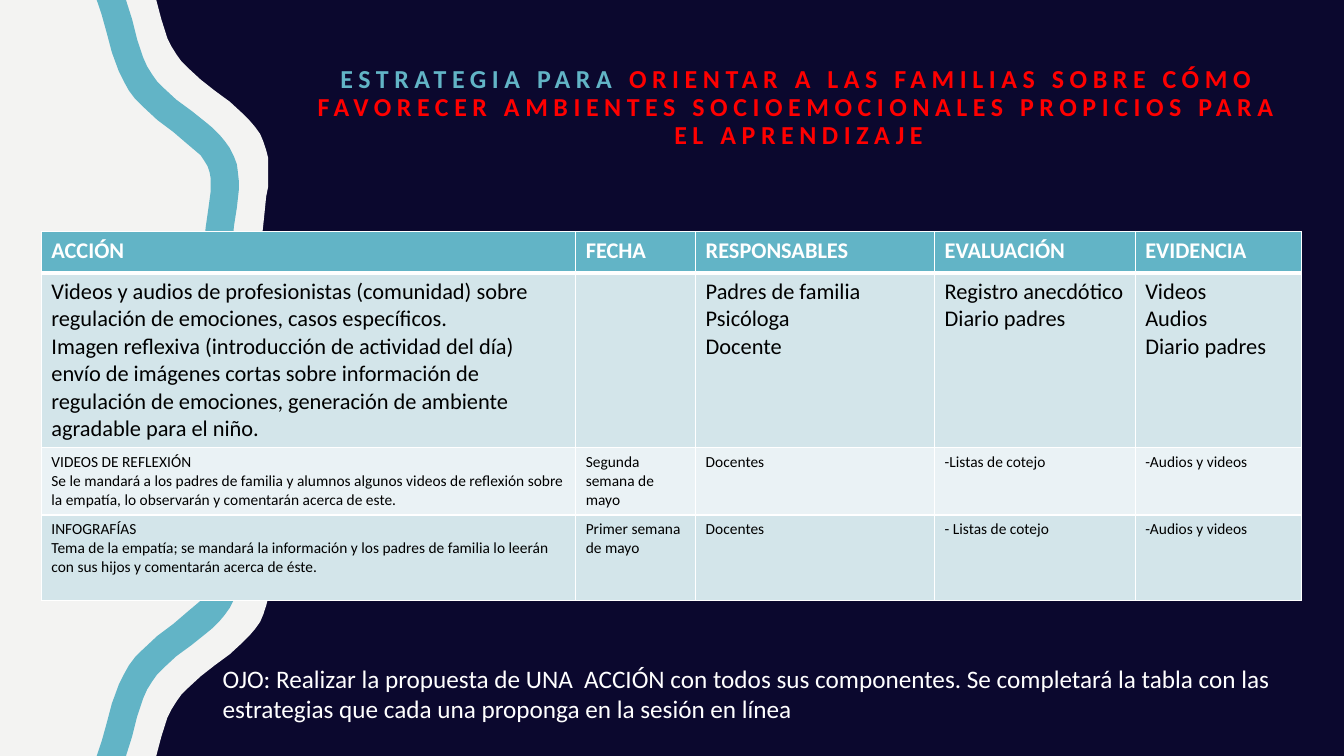
from dataclasses import dataclass

import pptx
from lxml import etree
from pptx import dml, oxml, slide as s, table as t, util as u
from pptx.dml import color
from pptx.enum import text
from pptx.oxml import ns
from pptx.text import text as tx

Point = tuple[float, float]


@dataclass(frozen=True)
class Theme:
    font: str = "Calibri"
    navy: str = "0B082E"
    paper: str = "F3F3F2"
    teal: str = "62B4C6"
    red: str = "FF0000"
    white: str = "FFFFFF"
    black: str = "000000"
    band_dark: str = "D3E5EA"
    band_light: str = "EAF2F5"
    title_size: float = 18.5
    note_size: float = 18
    large_size: float = 16
    small_size: float = 11


@dataclass(frozen=True)
class Wave:
    fill: str
    outer: list[Point]
    inner: list[Point]


@dataclass(frozen=True)
class Row:
    height: float
    fill: str
    ink: str
    size: float
    bold: bool
    cells: list[list[str]]


THEME = Theme()
WIDTH, HEIGHT = 13.33, 7.5
COLUMNS = [5.3, 1.19, 2.37, 1.99, 1.65]

WAVES = [
    Wave(
        THEME.paper,
        [(1.55, 0), (1.6, 0.19), (1.66, 0.38), (1.7, 0.46), (1.75, 0.54), (1.8, 0.61),
         (1.86, 0.67), (1.99, 0.79), (2.13, 0.9), (2.28, 1.01), (2.41, 1.13), (2.47, 1.19),
         (2.53, 1.26), (2.58, 1.33), (2.61, 1.4), (2.64, 1.49), (2.66, 1.57), (2.66, 1.85),
         (2.64, 1.95), (2.62, 2.15), (2.6, 2.34), (2.59, 2.44), (2.6, 2.53), (2.61, 2.62),
         (2.63, 2.71), (2.66, 2.8), (2.7, 2.88), (2.8, 3.05), (2.9, 3.22), (2.99, 3.39),
         (3.02, 3.48), (3.05, 3.57), (3.07, 3.66), (3.08, 3.75)],
        [(0, 0), (0, 3.75)],
    ),
    Wave(
        THEME.teal,
        [(1.25, 0), (1.31, 0.19), (1.36, 0.39), (1.42, 0.57), (1.46, 0.66), (1.51, 0.74),
         (1.56, 0.81), (1.62, 0.87), (1.75, 0.99), (1.9, 1.1), (2.05, 1.22), (2.11, 1.27),
         (2.18, 1.34), (2.23, 1.4), (2.28, 1.47), (2.32, 1.55), (2.35, 1.63), (2.36, 1.71),
         (2.37, 1.8), (2.37, 1.88), (2.35, 2.06), (2.32, 2.25), (2.31, 2.43), (2.3, 2.52),
         (2.32, 2.69), (2.34, 2.78), (2.37, 2.87), (2.46, 3.04), (2.56, 3.21), (2.66, 3.39),
         (2.7, 3.48), (2.73, 3.57), (2.75, 3.66), (2.76, 3.75)],
        [(0.96, 0), (1.01, 0.15), (1.06, 0.33), (1.11, 0.52), (1.18, 0.71), (1.23, 0.81),
         (1.28, 0.9), (1.34, 0.98), (1.41, 1.05), (1.56, 1.19), (1.72, 1.31), (1.86, 1.43),
         (1.99, 1.54), (2.03, 1.6), (2.06, 1.65), (2.08, 1.71), (2.09, 1.77), (2.09, 1.9),
         (2.07, 2.05), (2.04, 2.26), (2.03, 2.38), (2.03, 2.62), (2.05, 2.75), (2.07, 2.85),
         (2.1, 2.94), (2.19, 3.12), (2.29, 3.29), (2.37, 3.43), (2.43, 3.57), (2.46, 3.63),
         (2.48, 3.75)],
    ),
]

ROWS = [
    Row(0.41, THEME.teal, THEME.white, THEME.large_size, True,
        [["ACCIÓN"], ["FECHA"], ["RESPONSABLES"], ["EVALUACIÓN"], ["EVIDENCIA"]]),
    Row(1.73, THEME.band_dark, THEME.black, THEME.large_size, False, [
        ["Videos y audios de profesionistas (comunidad) sobre regulación de emociones, "
         "casos específicos.",
         "Imagen reflexiva (introducción de actividad del día) envío de imágenes cortas sobre "
         "información de regulación de emociones, generación de ambiente agradable para el niño."],
        [],
        ["Padres de familia", "Psicóloga", "Docente"],
        ["Registro anecdótico", "Diario padres"],
        ["Videos", "Audios", "Diario padres"]]),
    Row(0.67, THEME.band_light, THEME.black, THEME.small_size, False, [
        ["VIDEOS DE REFLEXIÓN",
         "Se le mandará a los padres de familia y alumnos algunos videos de reflexión sobre la "
         "empatía, lo observarán y comentarán acerca de este."],
        ["Segunda semana de mayo"], ["Docentes"], ["-Listas de cotejo"], ["-Audios y videos"]]),
    Row(0.85, THEME.band_dark, THEME.black, THEME.small_size, False, [
        ["INFOGRAFÍAS",
         "Tema de la empatía; se mandará la información y los padres de familia lo leerán con sus "
         "hijos y comentarán acerca de éste."],
        ["Primer semana de mayo"], ["Docentes"], ["- Listas de cotejo"], ["-Audios y videos"]]),
]

TITLE = [
    ("ESTRATEGIA PARA ", THEME.teal),
    ("ORIENTAR A LAS FAMILIAS SOBRE CÓMO FAVORECER AMBIENTES SOCIOEMOCIONALES "
     "PROPICIOS PARA EL APRENDIZAJE", THEME.red),
]
NOTE = ("OJO: Realizar la propuesta de UNA  ACCIÓN con todos sus componentes. Se completará la "
        "tabla con las estrategias que cada una proponga en la sesión en línea")


def rgb(value: str) -> color.RGBColor:
    return color.RGBColor.from_string(value)


def add_span(para: tx._Paragraph, words: str, size: float, ink: str, bold: bool = False) -> tx._Run:
    span = para.add_run()
    span.text = words
    span.font.name = THEME.font
    span.font.size = u.Pt(size)
    span.font.bold = bold
    span.font.color.rgb = rgb(ink)
    return span


def mirrored(half: list[Point]) -> list[Point]:
    return half + [(x, HEIGHT - y) for x, y in reversed(half[:-1])]


def draw_wave(page: s.Slide, wave: Wave) -> None:
    outline = mirrored(wave.outer) + mirrored(wave.inner)[::-1]
    points = [(u.Inches(x), u.Inches(y)) for x, y in outline]
    builder = page.shapes.build_freeform(*points[0])
    builder.add_line_segments(points[1:], close=True)
    shape = builder.convert_to_shape()
    shape.shadow.inherit = False
    shape.fill.solid()
    shape.fill.fore_color.rgb = rgb(wave.fill)
    shape.line.fill.background()


def draw_title(page: s.Slide) -> None:
    box = page.shapes.title
    box.left, box.top = u.Inches(2.92), u.Inches(0.61)
    box.width, box.height = u.Inches(10), u.Inches(1.04)
    frame = box.text_frame
    frame.word_wrap = True
    frame.auto_size = text.MSO_AUTO_SIZE.NONE
    frame.vertical_anchor = text.MSO_ANCHOR.TOP
    para = frame.paragraphs[0]
    para.alignment = text.PP_ALIGN.CENTER
    para.line_spacing = 0.9
    for words, ink in TITLE:
        span = add_span(para, words, THEME.title_size, ink, True)
        span.font._element.set("spc", "400")


def set_borders(cell: t._Cell, bottom: float) -> None:
    properties = cell._tc.get_or_add_tcPr()
    for side, points in (("L", 1), ("R", 1), ("T", 1), ("B", bottom)):
        line = etree.SubElement(properties, ns.qn(f"a:ln{side}"), w=str(u.Pt(points)))
        fill = etree.SubElement(line, ns.qn("a:solidFill"))
        etree.SubElement(fill, ns.qn("a:srgbClr"), val=THEME.white)


def draw_table(page: s.Slide) -> None:
    frame = page.shapes.add_table(
        len(ROWS), len(COLUMNS), u.Inches(0.41), u.Inches(2.3),
        u.Inches(sum(COLUMNS)), u.Inches(sum(row.height for row in ROWS)))
    table = frame.table
    table.first_row = table.horz_banding = False
    for column, width in zip(table.columns, COLUMNS):
        column.width = u.Inches(width)
    for index, row in enumerate(ROWS):
        table.rows[index].height = u.Inches(row.height)
        for cell, lines in zip(table.rows[index].cells, row.cells):
            set_borders(cell, 3 if index == 0 else 1)
            cell.fill.solid()
            cell.fill.fore_color.rgb = rgb(row.fill)
            for number, words in enumerate(lines):
                body = cell.text_frame
                para = body.add_paragraph() if number else body.paragraphs[0]
                add_span(para, words, row.size, row.ink, row.bold)


def draw_note(page: s.Slide) -> None:
    box = page.shapes.add_textbox(u.Inches(2.11), u.Inches(6.53), u.Inches(11.22), u.Inches(0.71))
    box.text_frame.word_wrap = True
    add_span(box.text_frame.paragraphs[0], NOTE, THEME.note_size, THEME.white)


def main() -> None:
    deck = pptx.Presentation()
    deck.slide_width, deck.slide_height = u.Inches(WIDTH), u.Inches(HEIGHT)
    page = deck.slides.add_slide(deck.slide_layouts.get_by_name("Title Only"))
    page.background.fill.solid()
    page.background.fill.fore_color.rgb = rgb(THEME.navy)
    for wave in WAVES:
        draw_wave(page, wave)
    draw_title(page)
    draw_table(page)
    draw_note(page)
    deck.save("out.pptx")


if __name__ == "__main__":
    main()
